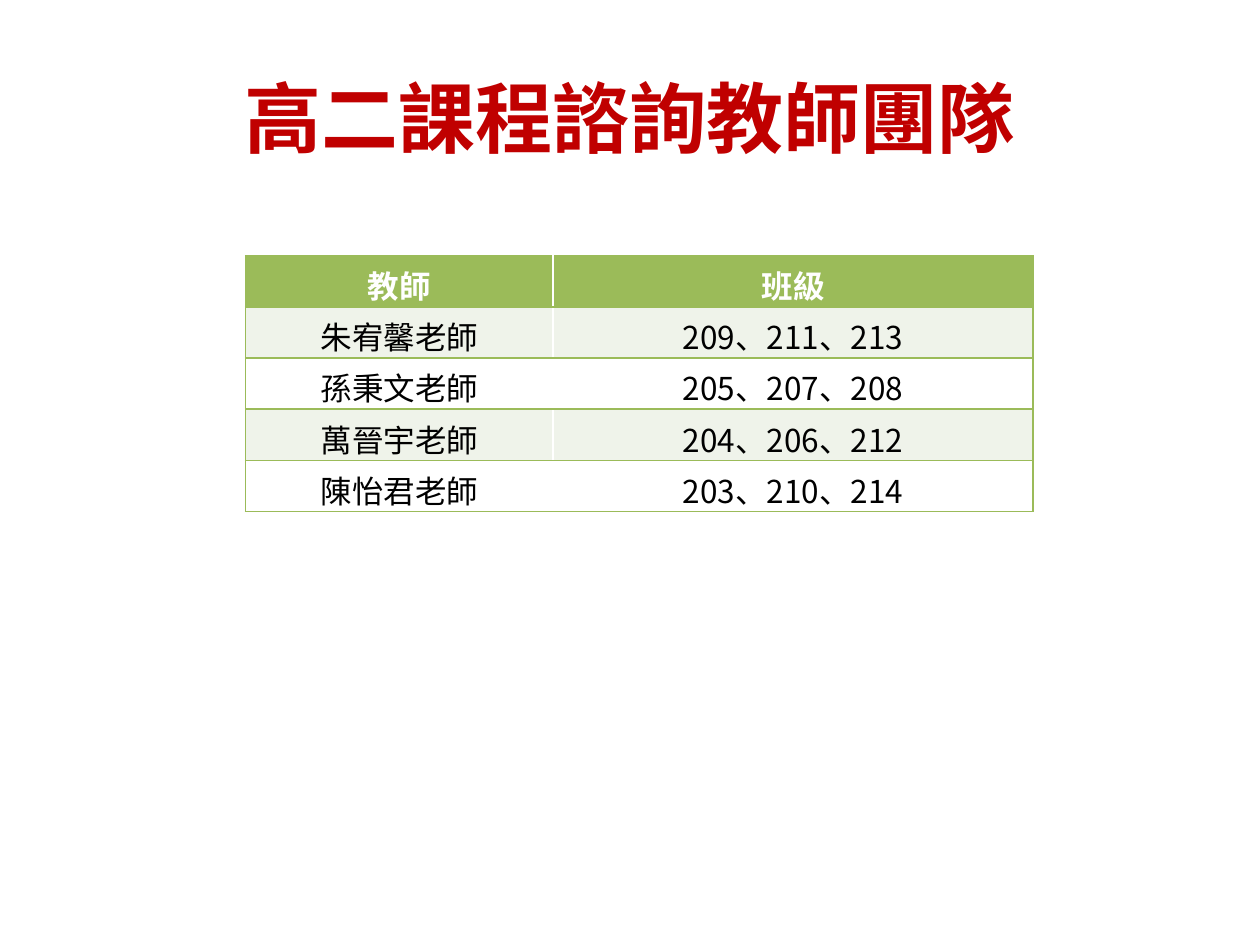
"""Build the slide listing the grade-two course advisers and their classes."""
from dataclasses import dataclass

from lxml import etree
from pptx import Presentation
from pptx import util as u
from pptx.dml.color import RGBColor
from pptx.enum import text
from pptx.oxml import ns


@dataclass(frozen=True)
class Theme:
    font: str = "Noto Sans CJK SC"
    red: str = "C00000"
    green: str = "9BBB59"
    pale: str = "EFF3EA"
    white: str = "FFFFFF"
    black: str = "000000"
    title: float = 44
    body: float = 18
    line: float = 1


@dataclass(frozen=True)
class Row:
    name: str
    group: str
    fill: str
    ink: str = Theme.black
    bold: bool = False


THEME = Theme()
ROWS = [
    Row("教師", "班級", THEME.green, THEME.white, True),
    Row("朱宥馨老師", "209、211、213", THEME.pale),
    Row("孫秉文老師", "205、207、208", THEME.white),
    Row("萬晉宇老師", "204、206、212", THEME.pale),
    Row("陳怡君老師", "203、210、214", THEME.white),
]
WIDTHS = (175.5, 274.5)
HEIGHT = 29.2


def write(frame, words: str, *, size: float, ink: str, bold: bool = False) -> None:
    para = frame.paragraphs[0]
    para.alignment = text.PP_ALIGN.CENTER
    run = para.add_run()
    run.text = words
    font = run.font
    font.name, font.size, font.bold = THEME.font, u.Pt(size), bold
    font.color.rgb = RGBColor.from_string(ink)
    east = etree.SubElement(run._r.get_or_add_rPr(), ns.qn("a:ea"))
    east.set("typeface", THEME.font)


def edge(cell, sides: str) -> None:
    props = cell._tc.get_or_add_tcPr()
    for side in sides:
        line = etree.SubElement(props, ns.qn(f"a:ln{side}"), w=str(u.Pt(THEME.line)))
        fill = etree.SubElement(line, ns.qn("a:solidFill"))
        etree.SubElement(fill, ns.qn("a:srgbClr"), val=THEME.green)


def head(slide, words: str) -> None:
    box = slide.shapes.add_textbox(u.Pt(36), u.Pt(21.6), u.Pt(648), u.Pt(90))
    frame = box.text_frame
    frame.word_wrap = True
    frame.vertical_anchor = text.MSO_ANCHOR.MIDDLE
    write(frame, words, size=THEME.title, ink=THEME.red, bold=True)


def grid(slide, rows: list[Row]) -> None:
    table = slide.shapes.add_table(
        len(rows), len(WIDTHS), u.Pt(140.4), u.Pt(146.2),
        u.Pt(sum(WIDTHS)), u.Pt(HEIGHT * len(rows)),
    ).table
    for col, width in zip(table.columns, WIDTHS):
        col.width = u.Pt(width)
    for line, row in zip(table.rows, rows):
        line.height = u.Pt(HEIGHT)
        for cell, words, sides in zip(line.cells, (row.name, row.group), ("LTB", "RTB")):
            edge(cell, sides)
            cell.fill.solid()
            cell.fill.fore_color.rgb = RGBColor.from_string(row.fill)
            write(cell.text_frame, words, size=THEME.body, ink=row.ink, bold=row.bold)


def main() -> None:
    deck = Presentation()
    deck.slide_width, deck.slide_height = u.Pt(720), u.Pt(540)
    slide = deck.slides.add_slide(deck.slide_layouts[6])
    head(slide, "高二課程諮詢教師團隊")
    grid(slide, ROWS)
    deck.save("out.pptx")


if __name__ == "__main__":
    main()
